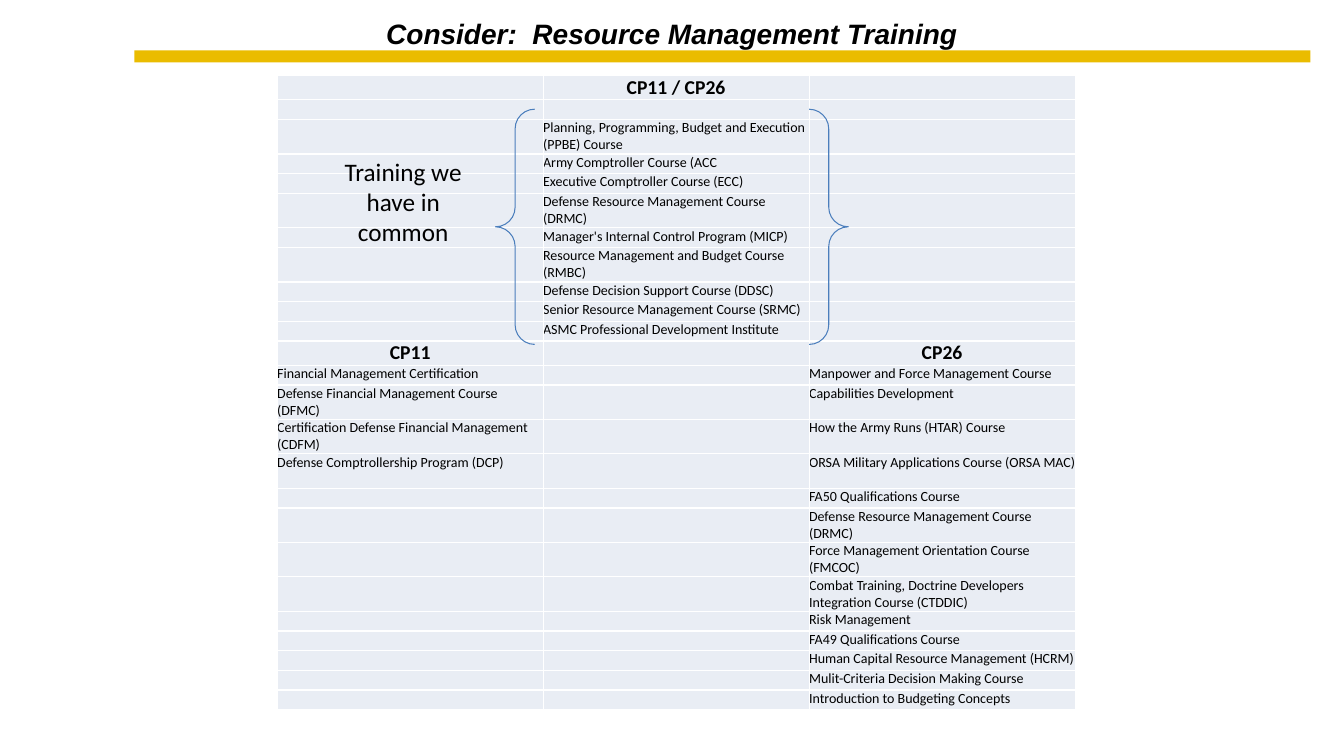
"""Build the resource management training slide."""
from lxml import etree
from pptx import Presentation
from pptx.dml.color import RGBColor
from pptx.enum import shapes, text
from pptx.oxml import ns
from pptx.util import Pt

BLACK = RGBColor(0, 0, 0)
GOLD = RGBColor(0xEA, 0xBC, 0x00)
BLUE = RGBColor(0x4B, 0x7E, 0xBC)
PALE = RGBColor(0xE9, 0xED, 0xF4)
WHITE = RGBColor(0xFF, 0xFF, 0xFF)

SHARED = [
    "Planning, Programming, Budget and Execution (PPBE) Course",
    "Army Comptroller Course (ACC",
    "Executive Comptroller Course (ECC)",
    "Defense Resource Management Course (DRMC)",
    "Manager's Internal Control Program (MICP)",
    "Resource Management and Budget Course (RMBC)",
    "Defense Decision Support Course (DDSC)",
    "Senior Resource Management Course (SRMC)",
    "ASMC Professional Development Institute",
]
FINANCE = [
    "Financial Management Certification",
    "Defense Financial Management Course (DFMC)",
    "Certification Defense Financial Management (CDFM)",
    "Defense Comptrollership Program (DCP)",
]
FORCE = [
    "Manpower and Force Management Course",
    "Capabilities Development",
    "How the Army Runs (HTAR) Course",
    "ORSA Military Applications Course (ORSA MAC)",
    "FA50 Qualifications Course",
    "Defense Resource Management Course (DRMC)",
    "Force Management Orientation Course (FMCOC)",
    "Combat Training, Doctrine Developers Integration Course (CTDDIC)",
    "Risk Management",
    "FA49 Qualifications Course",
    "Human Capital Resource Management (HCRM)",
    "Mulit-Criteria Decision Making Course",
    "Introduction to Budgeting Concepts",
]
HEADS = {0, 11}
TALL = {2, 5, 7, 13, 14, 15, 17, 18, 19}


def style(para, size, face="Calibri", bold=False, center=True):
    para.alignment = text.PP_ALIGN.CENTER if center else text.PP_ALIGN.LEFT
    font = para.font
    font.size, font.name, font.bold = Pt(size), face, bold
    font.color.rgb = BLACK


def border(cell):
    props = cell._tc.get_or_add_tcPr()
    for side in ("lnL", "lnR", "lnT", "lnB"):
        line = etree.SubElement(props, ns.qn("a:" + side), w=str(Pt(1)))
        fill = etree.SubElement(line, ns.qn("a:solidFill"))
        etree.SubElement(fill, ns.qn("a:srgbClr"), val=str(WHITE))


deck = Presentation()
deck.slide_width, deck.slide_height = Pt(960), Pt(540)
slide = deck.slides.add_slide(deck.slide_layouts[5])

bar = slide.shapes.add_shape(
    shapes.MSO_SHAPE.RECTANGLE, Pt(96), Pt(36), Pt(840), Pt(8.64))
bar.shadow.inherit = False
bar.fill.solid()
bar.fill.fore_color.rgb = GOLD
bar.line.fill.background()

title = slide.shapes.title
title.left, title.top, title.width, title.height = Pt(252), Pt(11.5), Pt(456), Pt(24.5)
frame = title.text_frame
frame.text = "Consider:  Resource Management Training"
frame.margin_left = frame.margin_right = frame.margin_top = frame.margin_bottom = 0
frame.vertical_anchor = text.MSO_ANCHOR.TOP
frame.auto_size = text.MSO_AUTO_SIZE.NONE
style(frame.paragraphs[0], 20, "Arial", True)
frame.paragraphs[0].font.italic = True

rows = [("", "CP11 / CP26", ""), ("", "", "")]
rows += [("", name, "") for name in SHARED]
rows.append(("CP11", "", "CP26"))
rows += [(FINANCE[i] if i < len(FINANCE) else "", "", name)
         for i, name in enumerate(FORCE)]

table = slide.shapes.add_table(
    len(rows), 3, Pt(198), Pt(54), Pt(570), Pt(453.4)).table
table.first_row = table.horz_banding = False
for col in table.columns:
    col.width = Pt(190)
for r, row in enumerate(rows):
    head = r in HEADS
    size = 14 if head else 10
    table.rows[r].height = Pt(17.3 if head else 24.6 if r in TALL else 14.1)
    for c, name in enumerate(row):
        cell = table.cell(r, c)
        cell.margin_left = cell.margin_right = cell.margin_top = cell.margin_bottom = 0
        border(cell)
        cell.fill.solid()
        cell.fill.fore_color.rgb = PALE
        para = cell.text_frame.paragraphs[0]
        if name:
            para.text = name
            style(para, size, bold=head, center=head)
        else:
            etree.SubElement(para._p, ns.qn("a:endParaRPr"), sz=str(size * 100))

brace = slide.shapes.add_shape(
    shapes.MSO_SHAPE.DOUBLE_BRACE, Pt(354), Pt(78), Pt(252), Pt(168))
brace.shadow.inherit = False
brace.fill.background()
brace.line.color.rgb = BLUE
brace.line.width = Pt(0.75)

note = slide.shapes.add_textbox(Pt(228), Pt(108), Pt(120), Pt(72.7)).text_frame
note.word_wrap = True
note.text = "Training we have in common"
style(note.paragraphs[0], 18)

deck.save("out.pptx")
